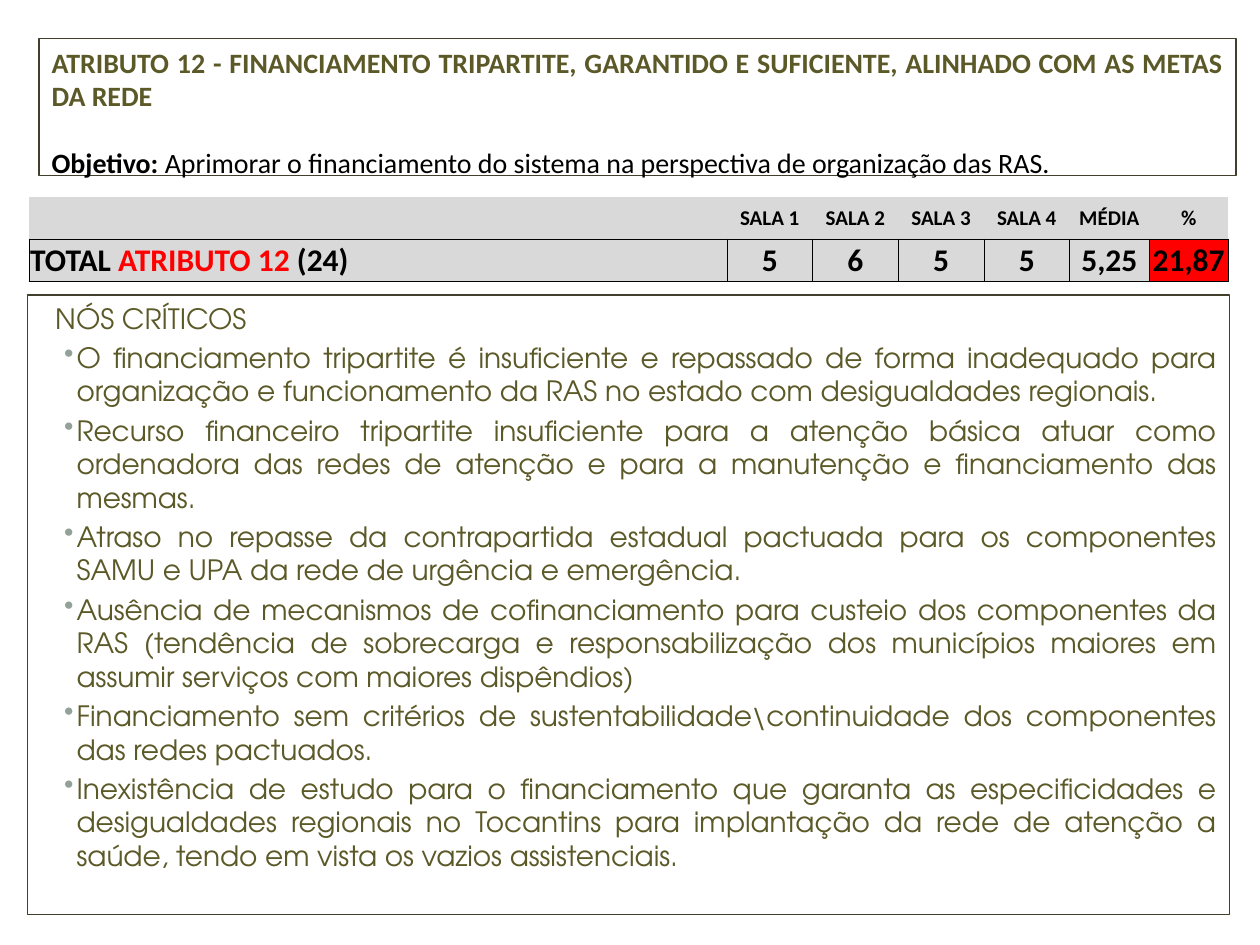
from dataclasses import dataclass

from lxml.etree import SubElement
from pptx import Presentation
from pptx.dml.color import RGBColor
from pptx.enum.shapes import MSO_SHAPE as Shape
from pptx.enum.text import MSO_ANCHOR as Anchor, MSO_AUTO_SIZE as AutoSize, PP_ALIGN as Align
from pptx.oxml.ns import qn
from pptx.util import Inches, Pt

WIDTH, HEIGHT = 10, 7.5
BODY_FONT, HEAD_FONT = "TeX Gyre Adventor", "Calibri"
OLIVE, FRAME, BULLET = "5C5928", "42402C", "93A299"
BLACK, WHITE, GREY, RED = "000000", "FFFFFF", "D9D9D9", "FF0000"


@dataclass
class Span:
    text: str
    size: float = 16
    color: str = BLACK
    bold: bool = True
    font: str = HEAD_FONT


@dataclass
class Area:
    """A place given as shares of the page width and height."""
    left: float
    top: float
    width: float
    height: float

    def lengths(self) -> tuple:
        return (Inches(self.left * WIDTH), Inches(self.top * HEIGHT),
                Inches(self.width * WIDTH), Inches(self.height * HEIGHT))


HEADING_AREA = Area(0.031, 0.041, 0.95, 0.145)
TABLE_AREA = Area(0.023, 0.208, 0.953, 0.09)
NODES_AREA = Area(0.022, 0.312, 0.954, 0.656)

COLUMNS = [3.98, 0.62, 0.94] + [0.68] * 4 + [0.63] * 2
LABEL_COLUMNS = 3
SCORES = [("SALA 1", "5"), ("SALA 2", "6"), ("SALA 3", "5"), ("SALA 4", "5"),
          ("MÉDIA", "5,25"), ("%", "21,87")]

CRITICAL_NODES = [
    "O financiamento tripartite é insuficiente e repassado de forma inadequado para "
    "organização e funcionamento da RAS no estado com desigualdades regionais.",
    "Recurso financeiro tripartite insuficiente para a atenção básica atuar como "
    "ordenadora das redes de atenção e para a manutenção e financiamento das mesmas.",
    "Atraso no repasse da contrapartida estadual pactuada para os componentes SAMU e "
    "UPA da rede de urgência e emergência.",
    "Ausência de mecanismos de cofinanciamento para custeio dos componentes da RAS "
    "(tendência de sobrecarga e responsabilização dos municípios maiores em assumir "
    "serviços com maiores dispêndios)",
    "Financiamento sem critérios de sustentabilidade\\continuidade dos componentes das "
    "redes pactuados.",
    "Inexistência de estudo para o financiamento que garanta as especificidades e "
    "desigualdades regionais no Tocantins para implantação da rede de atenção a saúde, "
    "tendo em vista os vazios assistenciais.",
]


def paint(target, color: str) -> None:
    """Give a fill, or the fill of a line, a solid colour."""
    target.solid()
    target.fore_color.rgb = RGBColor.from_string(color)


def write(para, spans: list[Span], align=Align.JUSTIFY, before: float = 0) -> None:
    para.alignment = align
    para.space_before = Pt(before)
    for span in spans:
        run = para.add_run()
        run.text = span.text
        run.font.name, run.font.size, run.font.bold = span.font, Pt(span.size), span.bold
        run.font.color.rgb = RGBColor.from_string(span.color)


def indent(para, left: float, first: float, bullet: str = "") -> None:
    props = para._p.get_or_add_pPr()
    props.set("marL", str(Inches(left)))
    props.set("indent", str(Inches(first)))
    if bullet:
        color = SubElement(props, qn("a:buClr"))
        SubElement(color, qn("a:srgbClr"), val=BULLET)
        SubElement(props, qn("a:buChar"), char=bullet)


def frame(box, area: Area):
    """Place a framed white box and return its text frame."""
    box.left, box.top, box.width, box.height = area.lengths()
    paint(box.fill, WHITE)
    paint(box.line.fill, FRAME)
    box.line.width = Pt(0.75)
    text = box.text_frame
    text.word_wrap, text.auto_size = True, AutoSize.NONE
    text.vertical_anchor = Anchor.TOP
    return text


def format_cell(cell, fill: str, bordered: bool) -> None:
    cell.margin_left = cell.margin_right = cell.margin_top = Inches(0.01)
    cell.margin_bottom = 0
    cell.vertical_anchor = Anchor.MIDDLE
    props = cell._tc.get_or_add_tcPr()
    for side in ("lnL", "lnR", "lnT", "lnB"):
        line = SubElement(props, qn(f"a:{side}"), w=str(Pt(0.5)))
        if bordered or side == "lnB":
            solid = SubElement(line, qn("a:solidFill"))
            SubElement(solid, qn("a:srgbClr"), val=BLACK)
        else:
            SubElement(line, qn("a:noFill"))
    paint(cell.fill, fill)


def add_heading(page) -> None:
    text = frame(page.shapes.title, HEADING_AREA)
    write(text.paragraphs[0], [Span(
        "ATRIBUTO 12 - FINANCIAMENTO TRIPARTITE, GARANTIDO E SUFICIENTE, "
        "ALINHADO COM AS METAS DA REDE", color=OLIVE)])
    write(text.add_paragraph(), [
        Span("Objetivo: "),
        Span("Aprimorar o financiamento do sistema na perspectiva de organização das RAS.",
             bold=False)], before=19)


def add_nodes(page) -> None:
    box = page.shapes.add_shape(Shape.RECTANGLE, *NODES_AREA.lengths())
    box.shadow.inherit = False
    text = frame(box, NODES_AREA)

    def olive(words: str) -> list[Span]:
        return [Span(words, color=OLIVE, bold=False, font=BODY_FONT)]

    title = text.paragraphs[0]
    write(title, olive("NÓS CRÍTICOS"), before=3.2)
    indent(title, 0.12, 0)
    for node in CRITICAL_NODES:
        para = text.add_paragraph()
        write(para, olive(node), before=3.2)
        indent(para, 0.29, -0.1, "•")


def add_scores(page) -> None:
    table = page.shapes.add_table(2, len(COLUMNS), *TABLE_AREA.lengths()).table
    table.first_row = table.horz_banding = False
    for column, width in zip(table.columns, COLUMNS):
        column.width = Inches(width)
    for r in range(2):
        for c in range(len(COLUMNS)):
            is_percent = r == 1 and c == len(COLUMNS) - 1
            format_cell(table.cell(r, c), RED if is_percent else GREY, bordered=r == 1)

    # Total label across the first columns, then one score per column
    label = table.cell(1, 0)
    label.merge(table.cell(1, LABEL_COLUMNS - 1))
    write(label.text_frame.paragraphs[0], [
        Span("TOTAL ", 18), Span("ATRIBUTO 12 ", 18, RED), Span("(24)", 18)], Align.LEFT)
    for c, pair in enumerate(SCORES, LABEL_COLUMNS):
        for r, (words, size) in enumerate(zip(pair, (12, 18))):
            para = table.cell(r, c).text_frame.paragraphs[0]
            write(para, [Span(words, size)], Align.CENTER)


def main() -> None:
    deck = Presentation()
    deck.slide_width, deck.slide_height = Inches(WIDTH), Inches(HEIGHT)
    page = deck.slides.add_slide(deck.slide_layouts[5])
    paint(page.background.fill, WHITE)
    add_heading(page)
    add_nodes(page)
    add_scores(page)
    deck.save("out.pptx")


if __name__ == "__main__":
    main()
